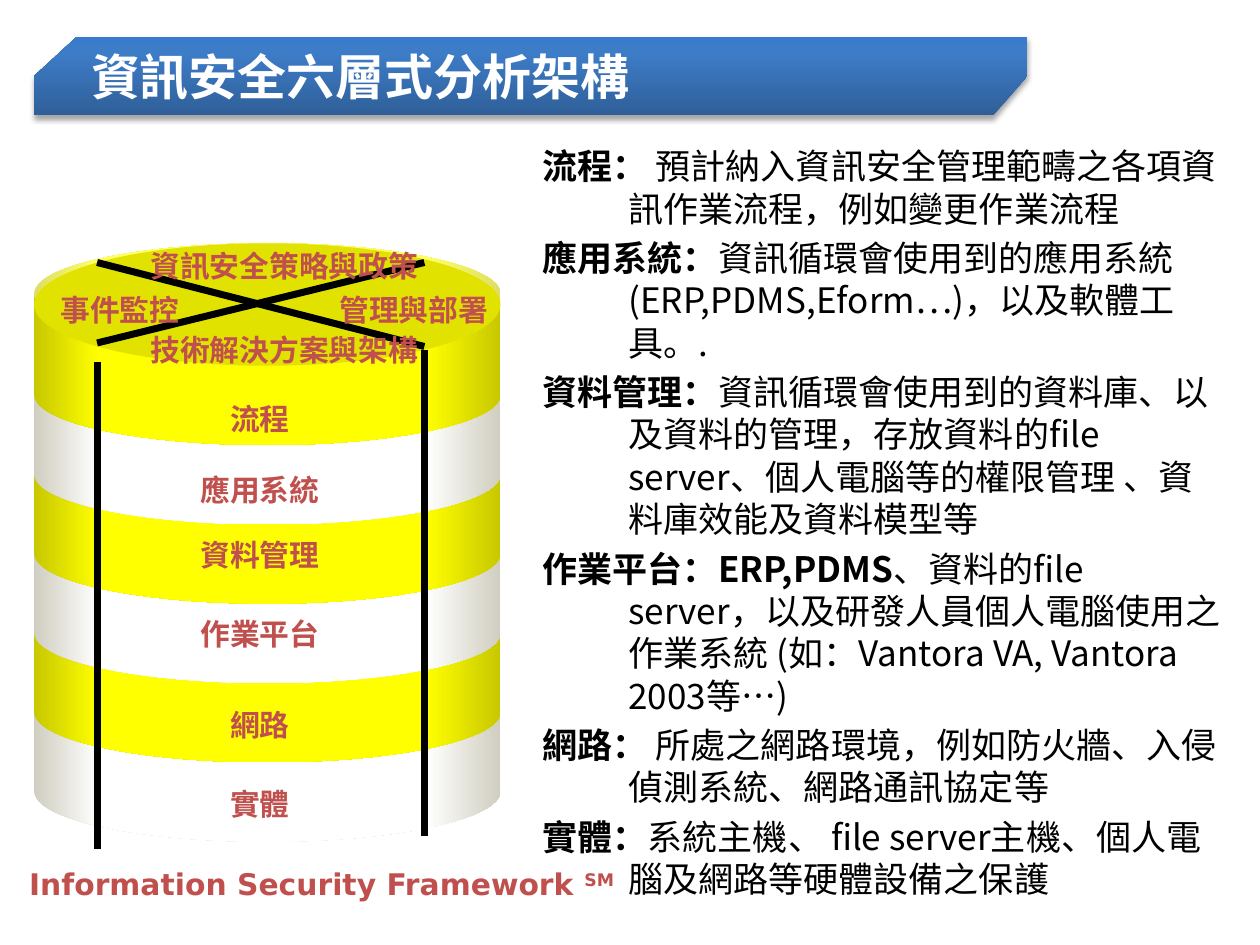
from pptx import Presentation
from pptx import util as u
from pptx.dml.color import RGBColor
from pptx.enum import shapes, text
from pptx.oxml import parse_xml
from pptx.oxml.ns import nsdecls, qn

Pt = u.Pt
ALIGN = text.PP_ALIGN
COLORS = {
    "ink": "000000", "white": "FFFFFF", "label": "C0504D",
    "yellow": "FFFF00", "yellow_edge": "C8C800", "yellow_lid": "E2E200",
    "ivory": "FFFFFF", "ivory_edge": "D0CEC0",
    "banner_low": "2F5F99", "banner_mid": "3D7CC7", "banner_top": "3A7CCB",
}
SANS = "DejaVu Sans"
CJK = "Noto Sans CJK SC"

TITLE = "資訊安全六層式分析架構"
LAYERS = [("流程", 104), ("應用系統", 145), ("資料管理", 182),
          ("作業平台", 227), ("網路", 279), ("實體", 324)]
LID_LABELS = [("資訊安全策略與政策", 143, 13), ("事件監控", 49, 38),
              ("管理與部署", 217, 38), ("技術解決方案與架構", 143, 61)]
RODS = [(223, 11, 36, 57), (223, 59, 36, 11),
        (223, 61, 223, 339), (36, 68, 36, 346)]
DEFINITIONS = [
    ("流程： ", "預計納入資訊安全管理範疇之各項資訊作業流程，例如變更作業流程"),
    ("應用系統：", "資訊循環會使用到的應用系統(ERP,PDMS,Eform…)，以及軟體工具。."),
    ("資料管理：", "資訊循環會使用到的資料庫、以及資料的管理，存放資料的file server、"
     "個人電腦等的權限管理 、資料庫效能及資料模型等"),
    ("作業平台：ERP,PDMS", "、資料的file server，以及研發人員個人電腦使用之作業系統 "
     "(如：Vantora VA, Vantora 2003等…)"),
    ("網路： ", "所處之網路環境，例如防火牆、入侵偵測系統、網路通訊協定等"),
    ("實體：", "系統主機、 file server主機、個人電腦及網路等硬體設備之保護"),
]


def rgb(name):
    return RGBColor.from_string(COLORS[name])


def add_run(p, words, font=SANS, size=17, color="label", bold=True, raised=False):
    r = p.add_run()
    r.text = words
    r.font.name, r.font.size, r.font.bold = font, Pt(size), bold
    r.font.color.rgb = rgb(color)
    props = r._r.get_or_add_rPr()
    props.append(parse_xml(f'<a:ea {nsdecls("a")} typeface="{CJK}"/>'))
    if raised:
        props.set("baseline", "30000")


def add_box(slide, x, y, w, h, wrap=True, inset=(0, 0, 0, 0),
            anchor=text.MSO_ANCHOR.MIDDLE):
    tf = slide.shapes.add_textbox(Pt(x), Pt(y), Pt(w), Pt(h)).text_frame
    format_frame(tf, wrap, inset, anchor)
    return tf


def format_frame(tf, wrap, inset, anchor):
    tf.word_wrap, tf.vertical_anchor = wrap, anchor
    tf.margin_left, tf.margin_top, tf.margin_right, tf.margin_bottom = map(Pt, inset)


def fill_gradient(sp, stops, angle):
    sp.fill.gradient()
    sp.fill.gradient_angle = angle
    stop_list = sp.element.spPr.find(qn("a:gradFill")).find(qn("a:gsLst"))
    for old in list(stop_list):
        stop_list.remove(old)
    for percent, name in stops:
        stop_list.append(parse_xml(
            f'<a:gs {nsdecls("a")} pos="{percent * 1000}">'
            f'<a:srgbClr val="{COLORS[name]}"/></a:gs>'))


def add_banner(slide, x, y, w, h):
    points = [(0, h / 2), (24.5, 0), (w, 0), (w, h / 2), (w - 19.5, h), (0, h)]
    corners = [(Pt(x + dx), Pt(y + dy)) for dx, dy in points]
    outline = slide.shapes.build_freeform(*corners[0])
    outline.add_line_segments(corners[1:])
    sp = outline.convert_to_shape()
    sp.shadow.inherit = False
    sp.line.fill.background()
    fill_gradient(sp, [(0, "banner_low"), (80, "banner_mid"), (100, "banner_top")], 90)
    sp.element.spPr.find(qn("a:effectLst")).append(parse_xml(
        f'<a:outerShdw {nsdecls("a")} blurRad="{Pt(3.1)}" dist="{Pt(1.8)}" dir="5400000">'
        f'<a:srgbClr val="{COLORS["ink"]}"><a:alpha val="35000"/></a:srgbClr></a:outerShdw>'))

    title = slide.shapes.title
    title.left, title.top, title.width, title.height = map(Pt, (x, y, w, h))
    tf = title.text_frame
    format_frame(tf, True, (32.5, 3.6, 7.2, 3.6), text.MSO_ANCHOR.MIDDLE)
    tf.auto_size = text.MSO_AUTO_SIZE.NONE
    tf.paragraphs[0].alignment = ALIGN.LEFT
    add_run(tf.paragraphs[0], TITLE, font="Arial", size=28, color="white")
    slide.shapes._spTree.append(title.element)


def add_label(slide, words, center_x, center_y):
    w, h = 17 * len(words) + 14, 28
    tf = add_box(slide, center_x - w / 2, center_y - h / 2, w, h, wrap=False)
    tf.paragraphs[0].alignment = ALIGN.CENTER
    add_run(tf.paragraphs[0], words)


def add_cylinder(slide, x, y, w, h):
    lid = 70
    step = (h - lid) / len(LAYERS)
    for i in reversed(range(len(LAYERS))):
        tone = "ivory" if i % 2 else "yellow"
        edge = tone + "_edge"
        can = slide.shapes.add_shape(shapes.MSO_SHAPE.CAN, Pt(x), Pt(y + i * step),
                                     Pt(w), Pt(lid + step))
        can.adjustments[0] = lid / (lid + step)
        can.shadow.inherit = False
        can.line.fill.background()
        fill_gradient(can, [(0, edge), (14, tone), (84, tone), (100, edge)], 0)
    top = slide.shapes.add_shape(shapes.MSO_SHAPE.OVAL, Pt(x), Pt(y), Pt(w), Pt(lid))
    top.shadow.inherit = False
    top.line.fill.background()
    top.fill.solid()
    top.fill.fore_color.rgb = rgb("yellow_lid")

    for words, dy in LAYERS:
        add_label(slide, words, x + 129, y + dy - 4)
    for x1, y1, x2, y2 in RODS:
        rod = slide.shapes.add_connector(shapes.MSO_CONNECTOR.STRAIGHT, Pt(x + x1),
                                         Pt(y + y1), Pt(x + x2), Pt(y + y2))
        rod.line.color.rgb = rgb("ink")
        rod.line.width = Pt(4)
        rod.element.spPr.append(parse_xml(f'<a:effectLst {nsdecls("a")}/>'))
    for words, dx, dy in LID_LABELS:
        add_label(slide, words, x + dx, y + dy)


def add_definitions(slide, x, y, w, h):
    tf = add_box(slide, x, y, w, h, inset=(7.2, 3.6, 7.2, 3.6),
                 anchor=text.MSO_ANCHOR.TOP)
    for i, (term, meaning) in enumerate(DEFINITIONS):
        p = tf.add_paragraph() if i else tf.paragraphs[0]
        p.line_spacing = Pt(24.2)
        p.space_before = Pt(4 if i else 0)
        props = p._p.get_or_add_pPr()
        props.set("marL", str(Pt(49)))
        props.set("indent", str(-Pt(49)))
        add_run(p, term, font=CJK, size=20, color="ink")
        add_run(p, meaning, font=CJK, size=20, color="ink", bold=False)


def add_caption(slide, x, y, w, h):
    tf = add_box(slide, x, y, w, h, wrap=False, inset=(7.2, 0, 7.2, 0))
    p = tf.paragraphs[0]
    p.alignment = ALIGN.LEFT
    add_run(p, "Information Security Framework ")
    add_run(p, "SM", raised=True)


def main():
    prs = Presentation()
    prs.slide_width, prs.slide_height = Pt(720), Pt(540)
    slide = prs.slides.add_slide(prs.slide_layouts[5])
    add_definitions(slide, 303, 79, 402.5, 395)
    add_caption(slide, 9.5, 491, 356, 28)
    add_cylinder(slide, 19.5, 139, 266.5, 342)
    add_banner(slide, 19.5, 21, 567.5, 45)
    prs.save("out.pptx")


if __name__ == "__main__":
    main()
